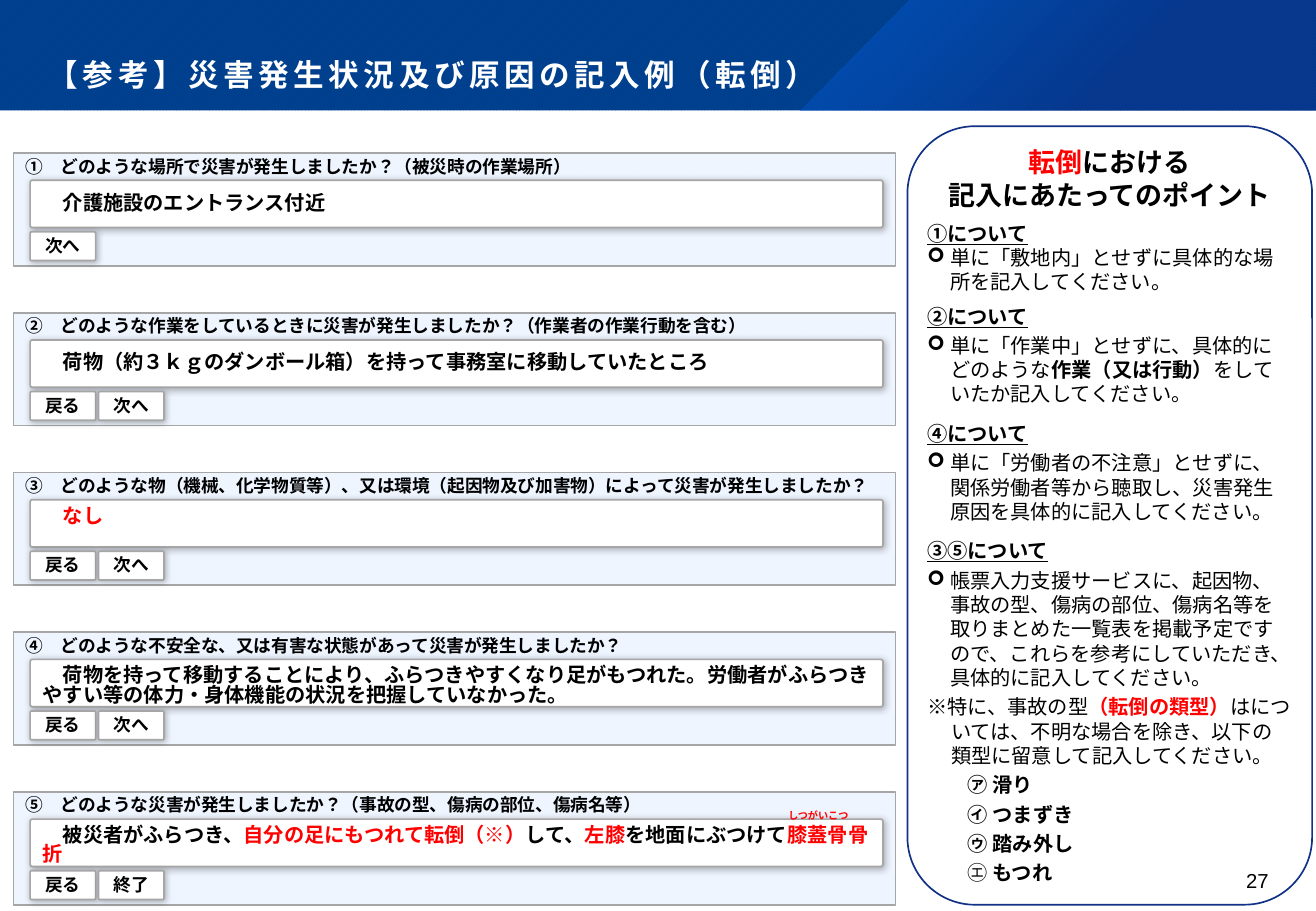
from lxml.etree import SubElement
from pptx import Presentation
from pptx.dml.color import RGBColor
from pptx.enum.dml import MSO_PATTERN
from pptx.enum.lang import MSO_LANGUAGE_ID
from pptx.enum.shapes import MSO_SHAPE
from pptx.enum.text import MSO_ANCHOR, PP_ALIGN
from pptx.oxml import parse_xml
from pptx.oxml.ns import nsdecls, qn
from pptx.util import Cm, Pt

WHITE = RGBColor(0xFF, 0xFF, 0xFF)
BLACK = RGBColor(0x00, 0x00, 0x00)
RED = RGBColor(0xFF, 0x00, 0x00)
NAVY = RGBColor(0x10, 0x31, 0x85)
BAND_STRIPE = RGBColor(0x00, 0x35, 0x79)
BAND_BLUE = RGBColor(0x00, 0x42, 0x92)
PALE_BLUE = RGBColor(0xEF, 0xF5, 0xFF)
GREY = RGBColor(0xA6, 0xA6, 0xA6)

JAPANESE_FONT = "Noto Sans CJK JP"
LATIN_FONT = "Roboto"

SLIDE_WIDTH, SLIDE_HEIGHT = Cm(27.51), Cm(19.05)
BAND_HEIGHT = Cm(2.31)
QUESTION_TOP, QUESTION_PITCH = 3.2, 3.34
BUTTON_LEFT, BUTTON_PITCH = 0.63, 1.43

# Run styles: b = bold, u = underlined, r = red
QUESTIONS = [
    ("①　どのような場所で災害が発生しましたか？（被災時の作業場所）",
     [("介護施設のエントランス付近", "b")], MSO_ANCHOR.MIDDLE, ["次へ"]),
    ("②　どのような作業をしているときに災害が発生しましたか？（作業者の作業行動を含む）",
     [("荷物（約３ｋｇのダンボール箱）を持って事務室に移動していたところ", "b")],
     MSO_ANCHOR.MIDDLE, ["戻る", "次へ"]),
    ("③　どのような物（機械、化学物質等）、又は環境（起因物及び加害物）によって災害が発生しましたか？",
     [("なし", "br")], MSO_ANCHOR.TOP, ["戻る", "次へ"]),
    ("④　どのような不安全な、又は有害な状態があって災害が発生しましたか？",
     [("荷物を持って移動することにより、ふらつきやすくなり足がもつれた。労働者がふらつき"
       "やすい等の体力・身体機能の状況を把握していなかった。", "b")],
     MSO_ANCHOR.TOP, ["戻る", "次へ"]),
    ("⑤　どのような災害が発生しましたか？（事故の型、傷病の部位、傷病名等）",
     [("被災者がふらつき、", "b"), ("自分の足にもつれて転倒（※）", "br"), ("して、", "b"),
      ("左膝", "br"), ("を地面にぶつけて", "b"), ("膝蓋骨骨折", "br")],
     MSO_ANCHOR.TOP, ["戻る", "終了"]),
]

POINTS_HEADING = [
    [("転倒", "br"), ("における", "b")],
    [("記入にあたってのポイント", "b")],
]
POINTS = [
    ("①について", 0, [("単に「敷地内」とせずに具体的な場所を記入してください。", "")], 0),
    ("②について", 3, [("単に「作業中」とせずに、具体的にどのような", ""),
                  ("作業（又は行動）", "b"), ("をしていたか記入してください。", "")], 3),
    ("④について", 3, [("単に「労働者の不注意」とせずに、関係労働者等から聴取し、"
                   "災害発生原因を具体的に記入してください。", "")], 3),
    ("③⑤について", 3, [("帳票入力支援サービスに、起因物、事故の型、傷病の部位、傷病名等を"
                    "取りまとめた一覧表を掲載予定ですので、これらを参考にしていただき、"
                    "具体的に記入してください。", "")], 3),
]
TYPE_NOTE = [("※特に、事故の型", ""), ("（転倒の類型）", "br"),
             ("はについては、不明な場合を除き、以下の類型に留意して記入してください。", "")]
FALL_TYPES = [
    [("㋐ 滑り", "b")],
    [("㋑ つまずき", "b")],
    [("㋒ 踏み外し", "b")],
    [("㋓ ", ""), ("もつれ", "b")],
]


def format_run(run, size, color=BLACK, bold=False, underline=False, latin=LATIN_FONT):
    font = run.font
    font.size, font.bold, font.underline = Pt(size), bold, underline
    font.color.rgb = color
    font.name = latin
    font.language_id = MSO_LANGUAGE_ID.JAPANESE
    SubElement(font._element, qn("a:ea"), typeface=JAPANESE_FONT)


def write_runs(paragraph, runs, size, latin=LATIN_FONT):
    for text, style in runs:
        run = paragraph.add_run()
        run.text = text
        format_run(run, size, RED if "r" in style else BLACK, "b" in style, "u" in style, latin)


def indent(paragraph, left, first_line, bullet=None):
    """Set indents in cm; call after spacing so that the bullet comes last."""
    properties = paragraph._p.get_or_add_pPr()
    properties.set("marL", str(Cm(left)))
    properties.set("indent", str(Cm(first_line)))
    if bullet:
        SubElement(properties, qn("a:buFont"), typeface="Wingdings")
        SubElement(properties, qn("a:buChar"), char=bullet)


def set_frame(frame, anchor, left, top, right, bottom):
    frame.word_wrap = True
    frame.vertical_anchor = anchor
    frame.margin_left, frame.margin_top = Cm(left), Cm(top)
    frame.margin_right, frame.margin_bottom = Cm(right), Cm(bottom)


def add_box(shapes, kind, left, top, width, height, fill, line):
    box = shapes.add_shape(kind, Cm(left), Cm(top), Cm(width), Cm(height))
    if fill is None:
        box.fill.background()
    else:
        box.fill.solid()
        box.fill.fore_color.rgb = fill
    box.line.color.rgb = line
    box.line.width = Pt(1)
    box.shadow.inherit = False
    return box


def add_field(shapes, left, top, width, height):
    """Add a white, slightly rounded box with a soft shadow."""
    field = add_box(shapes, MSO_SHAPE.ROUNDED_RECTANGLE, left, top, width, height, WHITE, GREY)
    field.adjustments[0] = 0.05
    field.element.spPr.find(qn("a:effectLst")).append(parse_xml(
        f'<a:outerShdw {nsdecls("a")} blurRad="50800" dist="12700" dir="2700000">'
        '<a:srgbClr val="000000"><a:alpha val="30000"/></a:srgbClr></a:outerShdw>'))
    return field


def add_header(slide):
    band = slide.shapes.add_shape(MSO_SHAPE.RECTANGLE, 0, 0, SLIDE_WIDTH, BAND_HEIGHT)
    band.fill.patterned()
    band.fill.pattern = MSO_PATTERN.DARK_UPWARD_DIAGONAL
    band.fill.fore_color.rgb = BAND_STRIPE
    band.fill.back_color.rgb = BAND_BLUE

    outline = slide.shapes.build_freeform(Cm(19.02), 0)
    outline.add_line_segments(
        [(SLIDE_WIDTH, 0), (SLIDE_WIDTH, BAND_HEIGHT), (Cm(16.71), BAND_HEIGHT)])
    accent = outline.convert_to_shape()
    accent.element.spPr.find(qn("a:custGeom")).addnext(parse_xml(
        f'<a:gradFill {nsdecls("a")}><a:gsLst>'
        '<a:gs pos="0"><a:srgbClr val="0064DF"><a:alpha val="50000"/></a:srgbClr></a:gs>'
        '<a:gs pos="62000"><a:srgbClr val="0C338E"><a:alpha val="55000"/></a:srgbClr></a:gs>'
        '</a:gsLst><a:path path="circle"><a:fillToRect r="100000" b="100000"/></a:path>'
        '</a:gradFill>'))
    for part in (band, accent):
        part.line.fill.background()
        part.shadow.inherit = False

    title = slide.shapes.title
    slide.shapes.element.append(title.element)
    title.left, title.top, title.width, title.height = 0, 0, SLIDE_WIDTH, BAND_HEIGHT
    set_frame(title.text_frame, MSO_ANCHOR.BOTTOM, 1, 0.91, 0.91, 0.36)
    title.text_frame.text = "【参考】災害発生状況及び原因の記入例（転倒）"
    heading = title.text_frame.paragraphs[0]
    heading.alignment = PP_ALIGN.LEFT
    heading.line_spacing = 0.9
    format_run(heading.runs[0], 18.1, WHITE, bold=True)
    heading.runs[0].font._element.set("spc", "270")


def add_question(slide, top, question, answer, answer_anchor, buttons):
    shapes = slide.shapes.add_group_shape().shapes
    card = add_box(shapes, MSO_SHAPE.RECTANGLE, 0.28, top, 18.44, 2.36, PALE_BLUE, GREY)
    set_frame(card.text_frame, MSO_ANCHOR.TOP, 0.25, 0.05, 0.25, 0.1)
    card.text_frame.paragraphs[0].alignment = PP_ALIGN.LEFT
    write_runs(card.text_frame.paragraphs[0], [(question, "b")], 10.5, JAPANESE_FONT)

    field = add_field(shapes, BUTTON_LEFT, top + 0.57, 17.83, 0.99)
    set_frame(field.text_frame, answer_anchor, 0.25, 0.15, 0.25, 0.13)
    entry = field.text_frame.paragraphs[0]
    entry.alignment = PP_ALIGN.LEFT
    entry.line_spacing = 0.8
    indent(entry, 0, 0.42)
    write_runs(entry, answer, 12)

    for column, label in enumerate(buttons):
        button = add_field(shapes, BUTTON_LEFT + column * BUTTON_PITCH, top + 1.65, 1.37, 0.6)
        set_frame(button.text_frame, MSO_ANCHOR.TOP, 0.1, 0.05, 0.1, 0.05)
        button.text_frame.paragraphs[0].alignment = PP_ALIGN.CENTER
        write_runs(button.text_frame.paragraphs[0], [(label, "b")], 10.5, JAPANESE_FONT)
    return shapes


def add_reading(shapes):
    """Add the small phonetic reading above the last answer."""
    reading = shapes.add_textbox(Cm(16.23), Cm(16.76), Cm(1.8), Cm(0.56))
    reading.text_frame.word_wrap = False
    syllables = reading.text_frame.paragraphs[0]
    syllables.line_spacing = 1.2
    syllables.space_after = Pt(6)
    write_runs(syllables, [("しつがいこつ", "br")], 6, JAPANESE_FONT)


def add_points_panel(slide):
    panel = add_box(slide.shapes, MSO_SHAPE.ROUNDED_RECTANGLE, 18.97, 2.64, 8.46, 16.28, None, NAVY)
    frame = panel.text_frame
    set_frame(frame, MSO_ANCHOR.TOP, 0, 0, 0, 0)

    def add_line(runs, size=12, before=0, after=0, align=PP_ALIGN.LEFT):
        line = frame.add_paragraph() if frame.text else frame.paragraphs[0]
        line.alignment = align
        line.space_before, line.space_after = Pt(before), Pt(after)
        write_runs(line, runs, size)
        return line

    for runs in POINTS_HEADING:
        add_line(runs, 16, align=PP_ALIGN.CENTER)
    for topic, topic_after, advice, advice_after in POINTS:
        add_line([(topic, "bu")], before=6, after=topic_after)
        indent(add_line(advice, after=advice_after), 0.48, -0.48, "➢")
    indent(add_line(TYPE_NOTE, after=3), 0.5, -0.5)
    for runs in FALL_TYPES:
        indent(add_line(runs, after=3), 0.85, 0)


def add_page_number(slide):
    number = slide.shapes.add_textbox(Cm(24.77), Cm(18.16), Cm(1.75), Cm(0.76))
    set_frame(number.text_frame, MSO_ANCHOR.TOP, 0, 0, 0, 0)
    number.text_frame.paragraphs[0].alignment = PP_ALIGN.RIGHT
    write_runs(number.text_frame.paragraphs[0], [("27", "")], 12, "Arial")


def main():
    presentation = Presentation()
    presentation.slide_width, presentation.slide_height = SLIDE_WIDTH, SLIDE_HEIGHT
    slide = presentation.slides.add_slide(presentation.slide_layouts[5])
    add_header(slide)
    add_points_panel(slide)
    add_page_number(slide)
    for row, content in enumerate(QUESTIONS):
        last_question = add_question(slide, QUESTION_TOP + row * QUESTION_PITCH, *content)
    add_reading(last_question)
    presentation.save("out.pptx")


if __name__ == "__main__":
    main()
